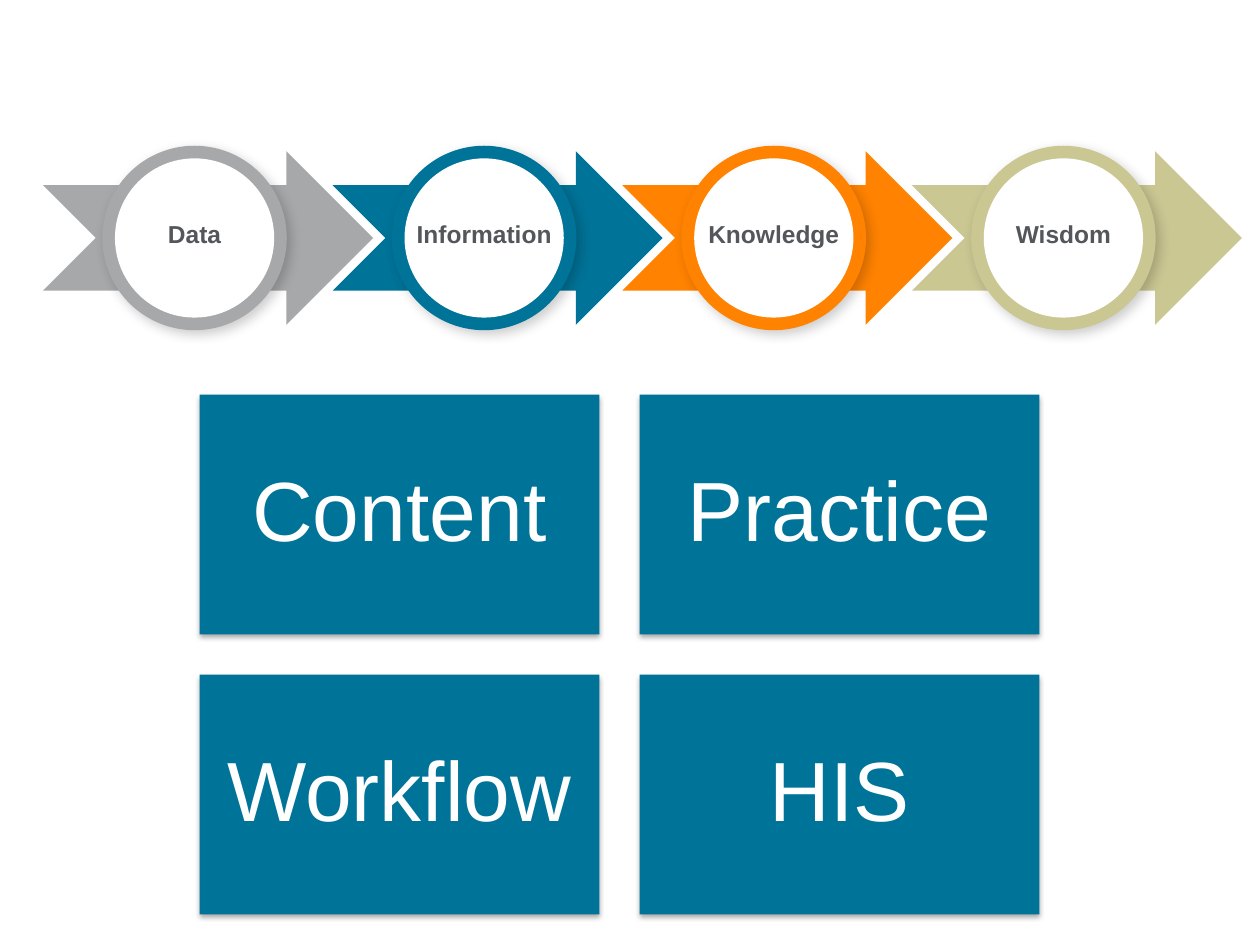
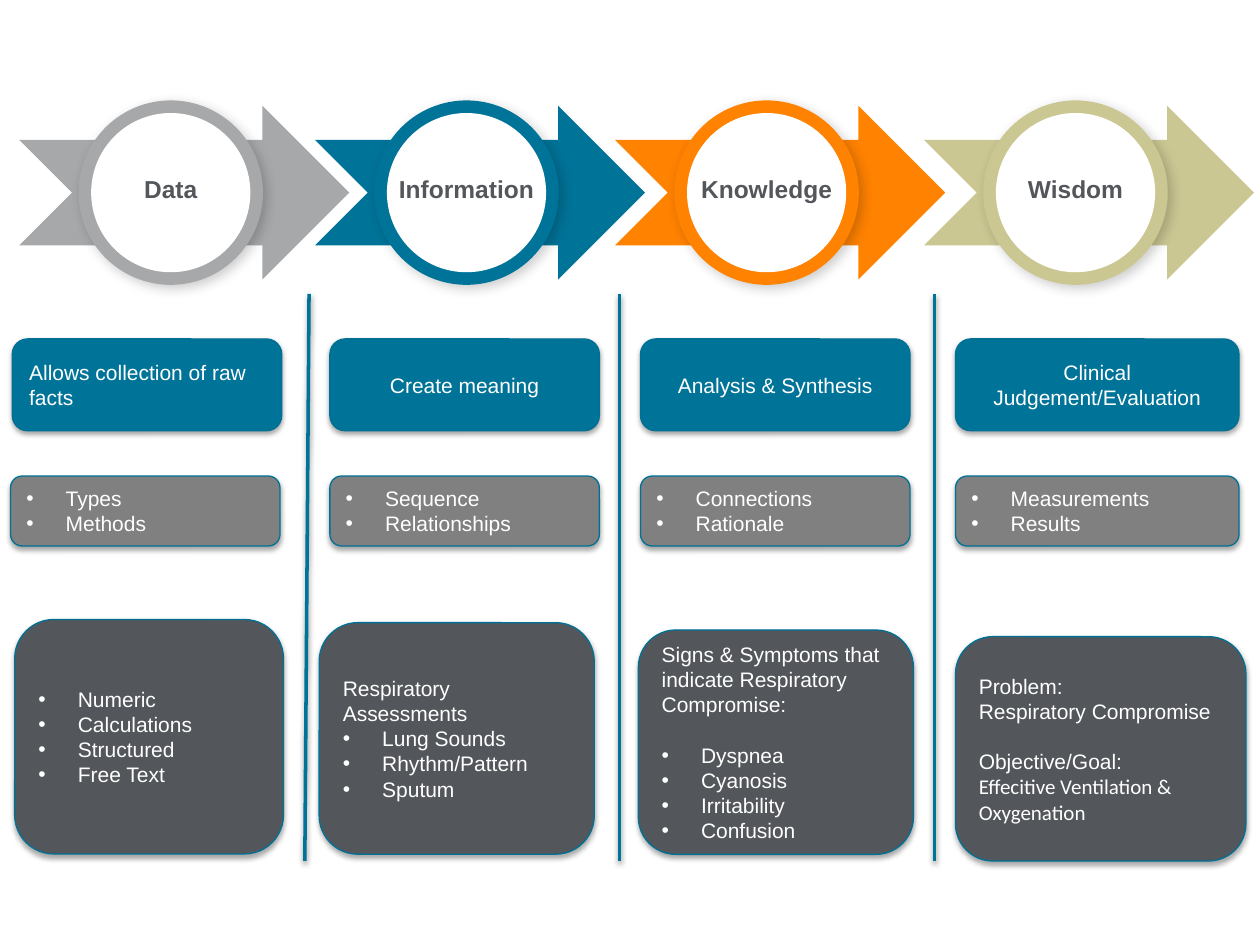
from dataclasses import dataclass

from pptx import Presentation
from pptx.dml.color import RGBColor
from pptx.enum.shapes import MSO_CONNECTOR, MSO_SHAPE
from pptx.enum.text import MSO_ANCHOR, MSO_AUTO_SIZE, PP_ALIGN
from pptx.oxml.ns import qn
from pptx.util import Pt
from lxml.etree import SubElement

COLORS = {
    "gray": "A7A8AA",
    "blue": "007398",
    "orange": "FF8200",
    "sand": "CBC793",
    "white": "FFFFFF",
    "slate": "53565A",
    "midgray": "808080",
    "edge": "007095",
    "shadow": "000000",
}
FONT = "Arial"
STAGES = [("Data", "gray"), ("Information", "blue"), ("Knowledge", "orange"), ("Wisdom", "sand")]
ARROW_WIDTH, ARROW_HEIGHT = 188.6, 99.2
RING_CENTER = 86.6
RING_SIZE, HUB_SIZE = 105.4, 91
LABEL_WIDTH, LABEL_HEIGHT, LABEL_DROP = 92, 24.5, 35.3
CARD_SHADOW = (35, 3.1, 1.8, 90)
RING_SHADOW = (20, 7, 3, 45)
LINE_SHADOW = (38, 3.1, 1.6, 90)
BULLET_INDENT = 22.5
GAP = 14.4


@dataclass
class Line:
    text: str
    bullet: bool = False
    align: PP_ALIGN = PP_ALIGN.LEFT
    gap: float = 0
    font: str = FONT


def bullets(*texts, gap=0):
    return [Line(text, bullet=True, gap=0 if index else gap) for index, text in enumerate(texts)]


def centered(text):
    return [Line(text, align=PP_ALIGN.CENTER)]


def rgb(name):
    return RGBColor.from_string(COLORS[name])


def cast_shadow(item, opacity, blur, distance, angle):
    properties = item._element.spPr
    effects = properties.find(qn("a:effectLst"))
    if effects is None:
        effects = SubElement(properties, qn("a:effectLst"))
    outer = SubElement(effects, qn("a:outerShdw"), blurRad=str(Pt(blur)), dist=str(Pt(distance)),
                       dir=str(angle * 60000), rotWithShape="0")
    tint = SubElement(outer, qn("a:srgbClr"), val=COLORS["shadow"])
    SubElement(tint, qn("a:alpha"), val=str(opacity * 1000))


def add_block(page, kind, left, top, width, height, fill, edge=None, shadow=None):
    block = page.shapes.add_shape(kind, Pt(left), Pt(top), Pt(width), Pt(height))
    block.fill.solid()
    block.fill.fore_color.rgb = rgb(fill)
    if edge:
        block.line.color.rgb = rgb(edge)
        block.line.width = Pt(0.75)
    else:
        block.line.fill.background()
    block.shadow.inherit = False
    if shadow:
        cast_shadow(block, *shadow)
    return block


def add_span(para, text, size, color, font=FONT, bold=False):
    span = para.add_run()
    span.text = text
    span.font.name = font
    span.font.size = Pt(size)
    span.font.bold = bold
    span.font.color.rgb = rgb(color)


def set_bullet(para):
    properties = para._p.get_or_add_pPr()
    properties.set("marL", str(Pt(BULLET_INDENT)))
    properties.set("indent", str(Pt(-BULLET_INDENT)))
    SubElement(properties, qn("a:buFont"), typeface=FONT)
    SubElement(properties, qn("a:buChar"), char="•")


def add_stage(page, left, top, name, color):
    arrow = add_block(page, MSO_SHAPE.NOTCHED_RIGHT_ARROW, left, top, ARROW_WIDTH, ARROW_HEIGHT, color)
    arrow.adjustments[0], arrow.adjustments[1] = 0.607, 0.5
    center_x, center_y = left + RING_CENTER, top + ARROW_HEIGHT / 2
    for size, fill, shadow in ((RING_SIZE, color, RING_SHADOW), (HUB_SIZE, "white", None)):
        add_block(page, MSO_SHAPE.OVAL, center_x - size / 2, center_y - size / 2, size, size,
                  fill, shadow=shadow)
    box = page.shapes.add_textbox(Pt(center_x - LABEL_WIDTH / 2), Pt(top + LABEL_DROP),
                                  Pt(LABEL_WIDTH), Pt(LABEL_HEIGHT))
    box.text_frame.word_wrap = False
    box.text_frame.auto_size = MSO_AUTO_SIZE.SHAPE_TO_FIT_TEXT
    para = box.text_frame.paragraphs[0]
    para.alignment = PP_ALIGN.CENTER
    add_span(para, name, 14, "slate", bold=True)


def add_stages(page, lefts, top):
    for left, (name, color) in zip(lefts, STAGES):
        add_stage(page, left, top, name, color)


def add_tile(page, left, top, text):
    tile = add_block(page, MSO_SHAPE.RECTANGLE, left, top, 228.5, 137, "blue", shadow=CARD_SHADOW)
    frame = tile.text_frame
    frame.word_wrap = True
    frame.margin_left = frame.margin_right = frame.margin_top = frame.margin_bottom = Pt(14.4)
    para = frame.paragraphs[0]
    para.alignment = PP_ALIGN.CENTER
    para.line_spacing = 0.9
    add_span(para, text, 48, "white")


def add_card(page, left, top, width, height, fill, lines):
    card = add_block(page, MSO_SHAPE.ROUNDED_RECTANGLE, left, top, width, height, fill,
                     "edge", CARD_SHADOW)
    frame = card.text_frame
    frame.word_wrap = True
    frame.vertical_anchor = MSO_ANCHOR.MIDDLE
    for index, line in enumerate(lines):
        para = frame.add_paragraph() if index else frame.paragraphs[0]
        if line.bullet:
            set_bullet(para)
        para.alignment = line.align
        if line.gap:
            para.space_before = Pt(line.gap)
        add_span(para, line.text, 12, "white", line.font)


def add_divider(page, top_x, bottom_x):
    divider = page.shapes.add_connector(MSO_CONNECTOR.STRAIGHT, Pt(top_x), Pt(168),
                                        Pt(bottom_x), Pt(492))
    divider.line.color.rgb = rgb("blue")
    divider.line.width = Pt(2)
    cast_shadow(divider, *LINE_SHADOW)


def build_topics(page):
    for index, text in enumerate(("Content", "Practice", "Workflow", "HIS")):
        row, column = divmod(index, 2)
        add_tile(page, 114 + column * 251.5, 225.5 + row * 160, text)
    add_stages(page, [24.6 + index * 165.5 for index in range(4)], 86.4)


def build_details(page):
    for top_x, bottom_x in ((176.6, 174.2), (354, 354), (534, 534)):
        add_divider(page, top_x, bottom_x)

    purposes = [
        (7, 154, [Line("Allows collection of raw facts")]),
        (188.5, 154, centered("Create meaning")),
        (366, 154, centered("Analysis & Synthesis")),
        (546, 162, centered("Clinical Judgement/Evaluation")),
    ]
    for left, width, lines in purposes:
        add_card(page, left, 193.7, width, 52.5, "blue", lines)

    methods = [
        (6, 154, bullets("Types", "Methods")),
        (188.5, 154, bullets("Sequence", "Relationships")),
        (366, 154, bullets("Connections", "Rationale")),
        (546, 162, bullets("Measurements", "Results")),
    ]
    for left, width, lines in methods:
        add_card(page, left, 272, width, 40, "midgray", lines)

    examples = [
        (8.4, 354, 153.6, 134, bullets("Numeric", "Calculations", "Structured", "Free Text")),
        (182.4, 355.8, 157.2, 132.3,
         [Line("Respiratory Assessments"), *bullets("Lung Sounds", "Rhythm/Pattern", "Sputum")]),
        (364.8, 360, 157.2, 128.2,
         [Line("Signs & Symptoms that indicate Respiratory Compromise:"),
          *bullets("Dyspnea", "Cyanosis", "Irritability", "Confusion", gap=GAP)]),
        (546, 363.8, 166, 128.2,
         [Line("Problem:"), Line("Respiratory Compromise"), Line("Objective/Goal:", gap=GAP),
          Line("Effecitive Ventilation & Oxygenation", font="Calibri")]),
    ]
    for left, top, width, height, lines in examples:
        add_card(page, left, top, width, height, "slate", lines)

    add_stages(page, (11, 180, 351.5, 528), 60.5)


def main():
    deck = Presentation()
    deck.slide_width, deck.slide_height = Pt(720), Pt(540)
    for build in (build_topics, build_details):
        build(deck.slides.add_slide(deck.slide_layouts[6]))
    deck.save("out.pptx")


if __name__ == "__main__":
    main()
